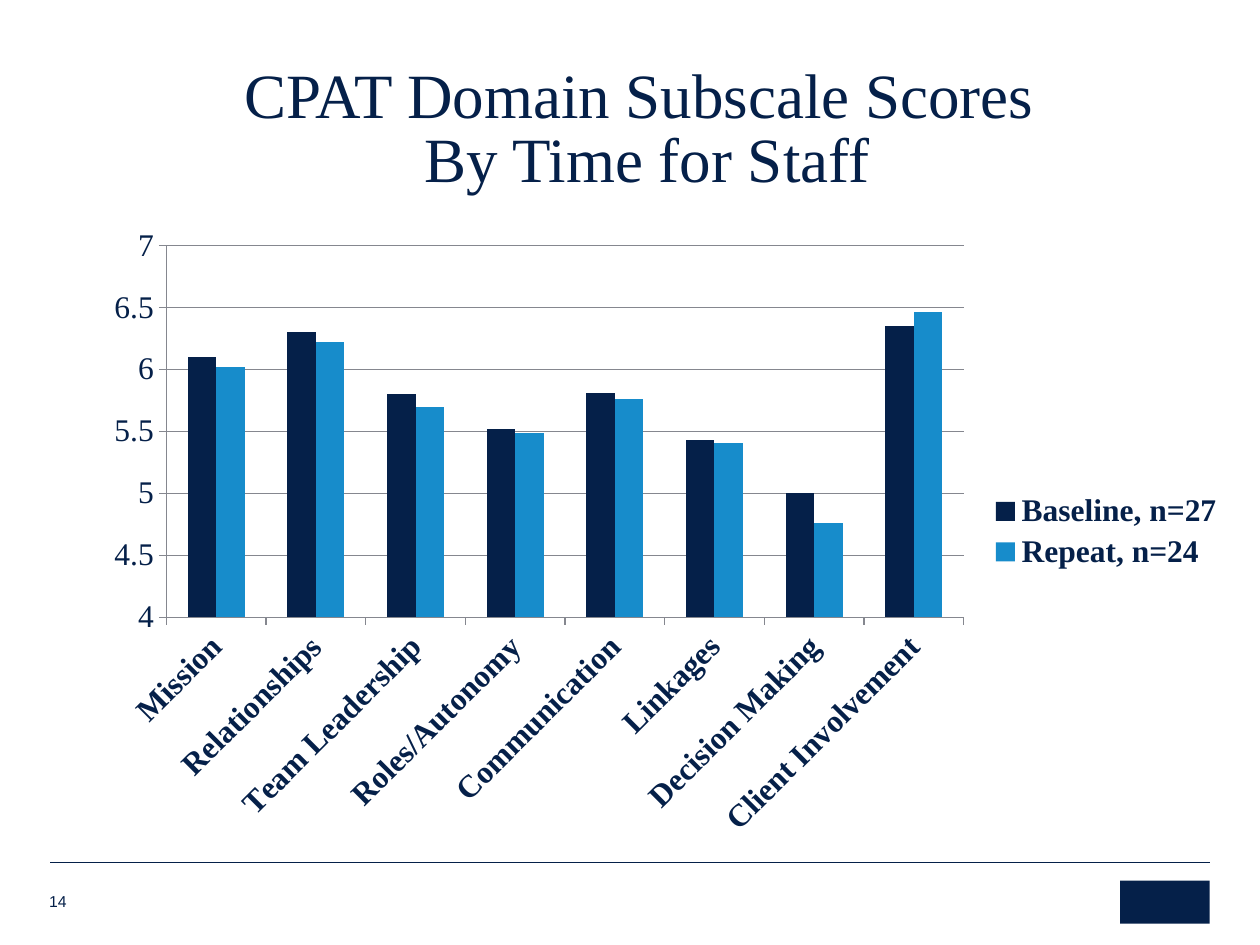
from pptx import Presentation
from pptx.chart.data import CategoryChartData
from pptx.dml.color import RGBColor
from pptx.enum.chart import XL_CHART_TYPE, XL_LEGEND_POSITION, XL_TICK_MARK
from pptx.enum.shapes import MSO_CONNECTOR, MSO_SHAPE
from pptx.enum.text import MSO_ANCHOR, PP_ALIGN
from pptx.oxml import parse_xml
from pptx.oxml.ns import nsdecls
from pptx.util import Inches, Pt

COLUMN = XL_CHART_TYPE.COLUMN_CLUSTERED
RIGHT = XL_LEGEND_POSITION.RIGHT
OUT = XL_TICK_MARK.OUTSIDE
LINE = MSO_CONNECTOR.STRAIGHT
RECT = MSO_SHAPE.RECTANGLE
BOTTOM = MSO_ANCHOR.BOTTOM
LEFT, CENTER = PP_ALIGN.LEFT, PP_ALIGN.CENTER

NAVY, BLUE, GRAY = "052049", "178CCB", "85878F"
SERIF, SANS = "Times New Roman", "Arial"

DOMAINS = ["Mission", "Relationships", "Team Leadership", "Roles/Autonomy",
           "Communication", "Linkages", "Decision Making", "Client Involvement"]
SCORES = [
    ("Baseline, n=27", NAVY, [6.1, 6.3, 5.8, 5.52, 5.81, 5.43, 5, 6.35]),
    ("Repeat, n=24", BLUE, [6.02, 6.22, 5.7, 5.49, 5.76, 5.41, 4.76, 6.46]),
]


def color(code):
    return RGBColor.from_string(code)


def inches(box):
    return [Inches(n) for n in box]


def style(font, size, face, bold=False):
    font.size, font.name, font.bold = Pt(size), face, bold
    font.color.rgb = color(NAVY)


def add_text(slide, box, text, size, face, align=LEFT, pad=(0, 0, 0),
             spacing=1.0):
    frame = slide.shapes.add_textbox(*inches(box)).text_frame
    frame.word_wrap = True
    frame.vertical_anchor = BOTTOM
    side, top, bottom = inches(pad)
    frame.margin_left = frame.margin_right = side
    frame.margin_top, frame.margin_bottom = top, bottom
    para = frame.paragraphs[0]
    para.text = text
    para.alignment, para.line_spacing = align, spacing
    for run in para.runs:
        style(run.font, size, face)


def add_footer(slide, box):
    left, top, width, height = box
    # Rule above the footer
    rule = slide.shapes.add_connector(
        LINE, *inches((left, top, left + width, top)))
    rule.line.color.rgb = color(NAVY)
    rule.line.width = Pt(0.25)
    rule.element.spPr.append(parse_xml(f"<a:effectLst {nsdecls('a')}/>"))
    # Plain block in the logo's place
    mark = slide.shapes.add_shape(
        RECT, *inches((left + width - 0.71, top + 0.15, 0.71, 0.34)))
    mark.shadow.inherit = False
    mark.fill.solid()
    mark.fill.fore_color.rgb = color(NAVY)
    mark.line.fill.background()
    # Page number
    add_text(slide, (left - 0.01, top + 0.22, 0.27, 0.17), "14", 9, SANS)


def style_axis(axis, bold):
    axis.major_tick_mark = OUT
    axis.format.line.color.rgb = color(GRAY)
    style(axis.tick_labels.font, 18, SERIF, bold)


def place_plot(chart, box, inner):
    """Fix the inner plot area; both boxes are in slide inches."""
    left, top, width, height = box
    x, y, w, h = inner
    parts = {"x": (x - left) / width, "y": (y - top) / height,
             "w": w / width, "h": h / height}
    area = chart.element.xpath("c:chart/c:plotArea")[0]
    for old in area.xpath("c:layout"):
        area.remove(old)
    sizes = "".join(f'<c:{k} val="{v:.4f}"/>' for k, v in parts.items())
    area.insert(0, parse_xml(
        f'<c:layout {nsdecls("c")}><c:manualLayout>'
        '<c:layoutTarget val="inner"/><c:xMode val="edge"/>'
        f'<c:yMode val="edge"/>{sizes}</c:manualLayout></c:layout>'))


def add_scores(slide, box):
    data = CategoryChartData()
    data.categories = DOMAINS
    for name, _, scores in SCORES:
        data.add_series(name, scores)
    chart = slide.shapes.add_chart(COLUMN, *inches(box), data).chart
    chart.has_title = False
    style(chart.font, 18, SERIF)
    # Columns
    plot = chart.plots[0]
    plot.gap_width, plot.overlap = 150, 0
    plot.vary_by_categories = False
    for series, (_, code, _) in zip(plot.series, SCORES):
        series.format.fill.solid()
        series.format.fill.fore_color.rgb = color(code)
    # Axes
    style_axis(chart.category_axis, True)
    for body in chart.element.xpath(".//c:catAx/c:txPr/a:bodyPr"):
        body.set("rot", "-2700000")
    scale = chart.value_axis
    style_axis(scale, False)
    scale.minimum_scale, scale.maximum_scale = 4, 7
    scale.major_unit = 0.5
    scale.tick_labels.number_format = "General"
    scale.tick_labels.number_format_is_linked = False
    scale.has_major_gridlines = True
    scale.major_gridlines.format.line.color.rgb = color(GRAY)
    # Legend
    chart.has_legend = True
    chart.legend.position = RIGHT
    chart.legend.include_in_layout = False
    style(chart.legend.font, 18, SERIF, True)
    left, top, width, height = box
    place_plot(chart, box, (left + 0.6, top + 0.24, width - 2.77, 2.95))


def main():
    deck = Presentation()
    deck.slide_width, deck.slide_height = Inches(10), Inches(7.5)
    slide = deck.slides.add_slide(deck.slide_layouts[6])
    add_footer(slide, (0.4, 6.84, 9.2, 0.5))
    add_text(slide, (0.71, 0.48, 8.85, 1.14),
             "CPAT Domain Subscale Scores \vBy Time for Staff", 36, SERIF,
             align=CENTER, pad=(0.1, 0.05, 0.07), spacing=0.85)
    add_scores(slide, (0.72, 1.71, 9.1, 5.02))
    deck.save("out.pptx")


if __name__ == "__main__":
    main()
